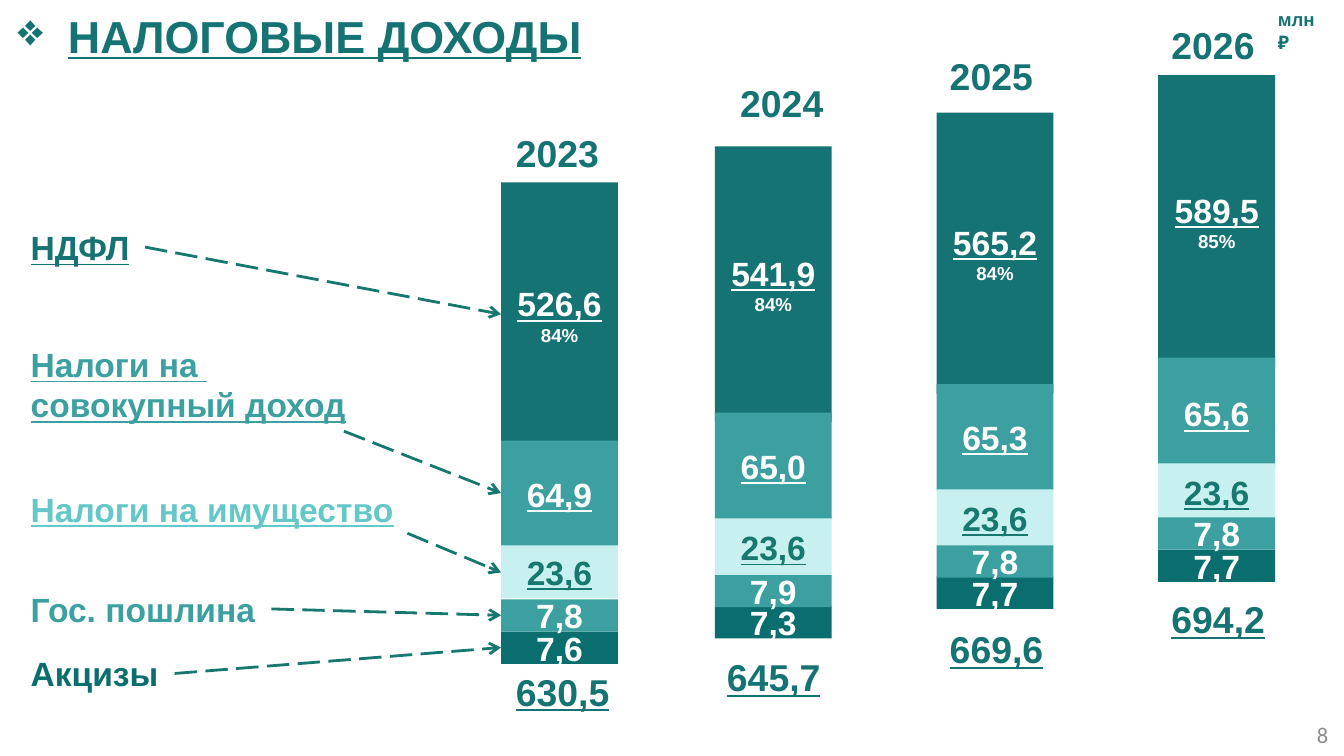
from dataclasses import dataclass
from typing import NamedTuple

import pptx
import pptx.dml.color
import pptx.enum.dml
import pptx.enum.shapes
import pptx.enum.text
import pptx.oxml.ns
import pptx.util
from lxml import etree

Cm = pptx.util.Cm
ALIGN = pptx.enum.text.PP_ALIGN
ANCHOR = pptx.enum.text.MSO_ANCHOR

DARK = "167373"
DEEP = "0A6E6E"
MEDIUM = "3CA0A0"
BRIGHT = "64C8C8"
PALE = "C8F0F0"
GREEN = "16786E"
WHITE = "FFFFFF"
GREY = "8C8C8C"
BAR_WIDTH = 2.21
THIN = 0.61


class Box(NamedTuple):
    left: float
    top: float
    width: float
    height: float


class Style(NamedTuple):
    size: float
    color: str
    bold: bool = True
    underline: bool = False
    font: str = "Arial"


class Tax(NamedTuple):
    fill: str
    value_color: str
    underline: bool


@dataclass
class Source:
    text: str
    box: Box
    color: str
    underline: bool
    arrow_start: tuple[float, float]
    arrow_end_top: float


@dataclass
class Year:
    name: str
    total: str
    share: str
    left: float
    name_at: tuple[float, float]
    total_at: tuple[float, float]
    values: list[str]
    tops: list[float]
    heights: list[float]


TAXES = [
    Tax(DARK, WHITE, True),
    Tax(MEDIUM, WHITE, True),
    Tax(PALE, GREEN, True),
    Tax(MEDIUM, WHITE, False),
    Tax(DEEP, WHITE, False),
]
DRAW_ORDER = [0, 4, 1, 2, 3]

SOURCES = [
    Source("НДФЛ", Box(0.33, 4.17, 2.39, 1.02), DARK, True, (2.74, 4.67), 5.94),
    Source("Налоги на \nсовокупный доход", Box(0.33, 6.38, 6.53, 1.8), MEDIUM, True, (6.5, 8.15), 9.32),
    Source("Налоги на имущество", Box(0.33, 9.12, 7.44, 1.02), BRIGHT, True, (7.7, 10.08), 10.82),
    Source("Гос. пошлина", Box(0.33, 11, 4.8, 1.02), MEDIUM, False, (5.13, 11.51), 11.63),
    Source("Акцизы", Box(0.33, 12.22, 2.95, 1.02), DEEP, False, (3.3, 12.73), 12.24),
]

YEARS = [
    Year("2023", "630,5", "84%", 9.47, (9.5, 2.34), (9.5, 12.52),
         ["526,6", "64,9", "23,6", "7,8", "7,6"],
         [3.45, 8.33, 10.31, 11.33, 11.94], [5, 2.01, 1, THIN, THIN]),
    Year("2024", "645,7", "84%", 13.51, (13.74, 1.4), (13.49, 12.24),
         ["541,9", "65,0", "23,6", "7,9", "7,3"],
         [2.77, 7.8, 9.8, 10.87, 11.46], [5.21, 2.01, 1.09, THIN, THIN]),
    Year("2025", "669,6", "84%", 17.7, (17.7, 0.89), (17.7, 11.71),
         ["565,2", "65,3", "23,6", "7,8", "7,7"],
         [2.13, 7.26, 9.25, 10.31, 10.9], [5.31, 2.01, 1.09, THIN, THIN]),
    Year("2026", "694,2", "85%", 21.89, (21.89, 0.3), (21.89, 11.15),
         ["589,5", "65,6", "23,6", "7,8", "7,7"],
         [1.42, 6.76, 8.76, 9.78, 10.39], [5.51, 2.11, 1.09, THIN, THIN]),
]


def rgb(color: str) -> pptx.dml.color.RGBColor:
    return pptx.dml.color.RGBColor.from_string(color)


def format_paragraph(paragraph, style: Style, align=ALIGN.LEFT) -> None:
    paragraph.alignment = align
    for run in paragraph.runs:
        run.font.name = style.font
        run.font.size = pptx.util.Pt(style.size)
        run.font.bold = style.bold
        run.font.underline = style.underline
        run.font.color.rgb = rgb(style.color)


def add_label(slide, text: str, box: Box, style: Style, wrap: bool = True,
              align=ALIGN.LEFT, anchor=ANCHOR.TOP) -> None:
    frame = slide.shapes.add_textbox(*map(Cm, box)).text_frame
    frame.word_wrap = wrap
    frame.vertical_anchor = anchor
    if not wrap:
        frame.auto_size = pptx.enum.text.MSO_AUTO_SIZE.SHAPE_TO_FIT_TEXT
    frame.text = text
    for paragraph in frame.paragraphs:
        format_paragraph(paragraph, style, align)


def add_title(slide, text: str) -> None:
    title = slide.shapes.title
    title.left, title.top, title.width, title.height = map(Cm, (0.08, 0.03, 17.83, 1.27))
    frame = title.text_frame
    frame.text = text
    frame.word_wrap = True
    frame.auto_size = pptx.enum.text.MSO_AUTO_SIZE.NONE
    frame.vertical_anchor = ANCHOR.TOP
    paragraph = frame.paragraphs[0]
    properties = paragraph._p.get_or_add_pPr()
    properties.set("marL", str(Cm(0.95)))
    properties.set("indent", str(Cm(-0.95)))
    bullet = etree.SubElement(properties, pptx.oxml.ns.qn("a:buChar"))
    bullet.set("char", "❖")
    format_paragraph(paragraph, Style(24, DARK, underline=True))


def add_segment(slide, text: str, box: Box, tax: Tax) -> None:
    segment = slide.shapes.add_shape(pptx.enum.shapes.MSO_SHAPE.RECTANGLE, *map(Cm, box))
    segment.shadow.inherit = False
    segment.fill.solid()
    segment.fill.fore_color.rgb = rgb(tax.fill)
    segment.line.fill.background()
    frame = segment.text_frame
    frame.word_wrap = True
    frame.vertical_anchor = ANCHOR.MIDDLE
    frame.text = text
    value, *shares = frame.paragraphs
    format_paragraph(value, Style(18, tax.value_color, underline=tax.underline), ALIGN.CENTER)
    for share in shares:
        format_paragraph(share, Style(10, tax.value_color), ALIGN.CENTER)


def add_year(slide, year: Year) -> None:
    for index in DRAW_ORDER:
        text = year.values[index]
        if index == 0:
            text += "\n" + year.share
        box = Box(year.left, year.tops[index], BAR_WIDTH, year.heights[index])
        add_segment(slide, text, box, TAXES[index])
    add_label(slide, year.name, Box(*year.name_at, 2.24, 1.12), Style(20, DARK))
    add_label(slide, year.total, Box(*year.total_at, 2.4, 1.12), Style(20, DARK, underline=True))


def add_source(slide, source: Source, bar_left: float) -> None:
    add_label(slide, source.text, source.box, Style(18, source.color, underline=source.underline), wrap=False)
    arrow = slide.shapes.add_connector(
        pptx.enum.shapes.MSO_CONNECTOR.STRAIGHT,
        *map(Cm, (*source.arrow_start, bar_left, source.arrow_end_top)))
    arrow.line.color.rgb = rgb(GREEN)
    arrow.line.width = pptx.util.Pt(1.5)
    arrow.line.dash_style = pptx.enum.dml.MSO_LINE.LONG_DASH
    properties = arrow._element.spPr
    tail = etree.SubElement(properties.find(pptx.oxml.ns.qn("a:ln")), pptx.oxml.ns.qn("a:tailEnd"))
    tail.set("type", "arrow")
    etree.SubElement(properties, pptx.oxml.ns.qn("a:effectLst"))


def main() -> None:
    deck = pptx.Presentation()
    deck.slide_width, deck.slide_height = Cm(25.4), Cm(14.29)
    slide = deck.slides.add_slide(deck.slide_layouts.get_by_name("Title Only"))
    add_title(slide, "НАЛОГОВЫЕ ДОХОДЫ")
    for year in YEARS:
        add_year(slide, year)
    for source in SOURCES:
        add_source(slide, source, YEARS[0].left)
    add_label(slide, "млн ₽", Box(23.9, 0.03, 1.5, 0.69), Style(10, DARK), wrap=False)
    add_label(slide, "8", Box(19.43, 13.51, 5.92, 0.76), Style(12, GREY, bold=False, font="Calibri"),
              align=ALIGN.RIGHT, anchor=ANCHOR.MIDDLE)
    deck.save("out.pptx")


if __name__ == "__main__":
    main()
